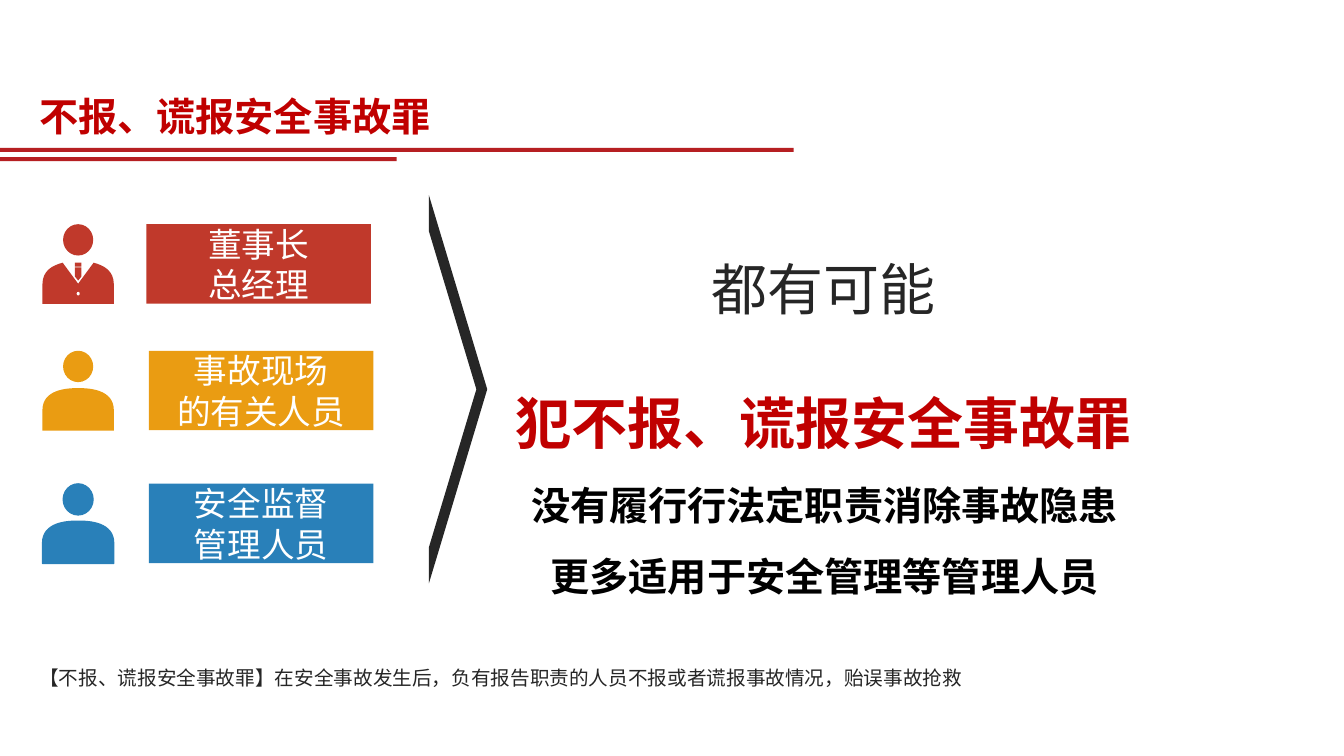
from typing import NamedTuple

from lxml import etree
from pptx import Presentation
from pptx.dml.color import RGBColor
from pptx.enum import shapes, text
from pptx.oxml import ns
from pptx.util import Cm, Pt

SANS = "Noto Sans CJK SC"
RED, DARK, WHITE = "C00000", "262626", "FFFFFF"
UNIT = Cm(0.01)  # icon outlines are drawn in hundredths of a centimetre
ICON_X = 1.97
KIND = shapes.MSO_SHAPE

Point = tuple[float, float]


class Box(NamedTuple):
    left: float
    top: float
    width: float
    height: float


class Contour(NamedTuple):
    """A start point and segments: one point is a line, three are a curve."""
    start: Point
    segments: list[tuple[Point, ...]]


class Role(NamedTuple):
    lines: list[str]
    color: str
    top: float
    card_left: float
    suit: bool = False
    outlined: bool = False


class Line(NamedTuple):
    words: str
    size: float
    color: str
    bold: bool = False
    font: str = SANS


ROLES = [
    Role(["董事长", "总经理"], "C0392B", 5.65, 3.69, suit=True),
    Role(["事故现场", "的有关人员"], "EA9C12", 8.84, 3.75),
    Role(["安全监督", "管理人员"], "2980B9", 12.19, 3.75, outlined=True),
]

PLAIN = [Contour((90, 201), [
    ((90, 150),), ((90, 97), (28, 94), (0, 94)),
    ((-28, 94), (-90, 97), (-90, 150)), ((-90, 201),)])]
BUTTON = Contour((0, 180), [
    ((-3, 180), (-4, 178), (-4, 175)), ((-4, 172), (-3, 170), (0, 170)),
    ((3, 170), (4, 172), (4, 175)), ((4, 178), (3, 180), (0, 180))])
SUIT = [Contour((39, 97), [
    ((0, 150),), ((-39, 97),), ((-65, 104), (-90, 117), (-90, 152)),
    ((-90, 201),), ((90, 201),), ((90, 152),),
    ((90, 117), (65, 104), (39, 97))]), BUTTON]
TIE = [Contour((0, 142), [((8, 132),), ((8, 109),), ((-8, 109),), ((-8, 132),)])]


def rgb(color: str) -> RGBColor:
    return RGBColor.from_string(color)


def paint(sp, color: str, outlined: bool = False):
    sp.shadow.inherit = False
    sp.fill.solid()
    sp.fill.fore_color.rgb = rgb(color)
    if outlined:
        sp.line.color.rgb = rgb(color)
        sp.line.width = Pt(0.75)
    else:
        sp.line.fill.background()
    return sp


def add_preset(s, kind, box: Box, color: str, outlined: bool = False):
    return paint(s.shapes.add_shape(kind, *map(Cm, box)), color, outlined)


def write(sp, lines: list[Line], align=text.PP_ALIGN.CENTER, spacing: float = 1,
          anchor=text.MSO_ANCHOR.TOP, wrap: bool = True) -> None:
    tf = sp.text_frame
    frame_format = {"auto_size": text.MSO_AUTO_SIZE.NONE, "word_wrap": wrap,
                    "vertical_anchor": anchor}
    for name, value in frame_format.items():
        setattr(tf, name, value)
    for i, line in enumerate(lines):
        p = tf.paragraphs[0] if i == 0 else tf.add_paragraph()
        pPr = p._p.get_or_add_pPr()
        pPr.set("marL", "0")
        pPr.set("indent", "0")
        etree.SubElement(pPr, ns.qn("a:buNone"))
        paragraph_format = {"alignment": align, "line_spacing": spacing,
                            "space_before": Pt(0), "space_after": Pt(0)}
        for name, value in paragraph_format.items():
            setattr(p, name, value)
        r = p.add_run()
        r.text = line.words
        font_format = {"name": line.font, "size": Pt(line.size), "bold": line.bold}
        for name, value in font_format.items():
            setattr(r.font, name, value)
        r.font.color.rgb = rgb(line.color)
        ea = etree.SubElement(r.font._element, ns.qn("a:ea"))
        ea.set("typeface", SANS)


def place(sp, box: Box):
    sp.left, sp.top, sp.width, sp.height = map(Cm, box)
    return sp


def add_outline(s, top: float, contours: list[Contour], color: str,
                outlined: bool = False) -> None:
    builder = s.shapes.build_freeform(*contours[0].start, scale=UNIT)
    for i, contour in enumerate(contours):
        if i:
            builder.move_to(*contour.start)
        builder.add_line_segments([pt for seg in contour.segments for pt in seg], close=True)
    sp = paint(builder.convert_to_shape(Cm(ICON_X), Cm(top)), color, outlined)
    # Join each run of three points into one Bezier curve
    steps = iter(list(sp._element.iter(ns.qn("a:lnTo"))))
    for contour in contours:
        for segment in contour.segments:
            first, *others = [next(steps) for _ in segment]
            if others:
                first.tag = ns.qn("a:cubicBezTo")
            for other in others:
                first.append(other[0])
                other.getparent().remove(other)
        # The closing step back to the start is left to the close command
        if contour.segments[-1][-1] != contour.start:
            continue


def add_role(s, role: Role) -> None:
    card = add_preset(s, KIND.RECTANGLE, Box(role.card_left, role.top, 5.66, 2), role.color)
    write(card, [Line(words, 24, WHITE) for words in role.lines],
          anchor=text.MSO_ANCHOR.MIDDLE)
    add_preset(s, KIND.OVAL, Box(ICON_X - 0.38, role.top, 0.76, 0.79), role.color, role.outlined)
    add_outline(s, role.top, SUIT if role.suit else PLAIN, role.color, role.outlined)
    if role.suit:
        add_preset(s, KIND.RECTANGLE, Box(ICON_X - 0.08, role.top + 0.97, 0.16, 0.1), role.color)
        add_outline(s, role.top, TIE, role.color)


def main() -> None:
    prs = Presentation()
    prs.slide_width, prs.slide_height = Cm(33.87), Cm(19.05)
    s = prs.slides.add_slide(prs.slide_layouts.get_by_name("Two Content"))
    title, conclusion, reasons = s.placeholders

    # Title with double rule
    for top, width in ((3.73, 20), (3.96, 10)):
        add_preset(s, KIND.RECTANGLE, Box(0, top, width, 0.1), "B61F22")
    write(place(title, Box(0.73, 2.21, 30.4, 1.45)),
          [Line("不报、谎报安全事故罪", 28, RED, True, "Arial")], text.PP_ALIGN.LEFT)

    # Roles and the arrow to the conclusion
    for role in ROLES:
        add_role(s, role)
    arrow = add_preset(s, KIND.NOTCHED_RIGHT_ARROW, Box(10.81, 4.92, 1.47, 9.78), DARK)
    arrow.adjustments[0], arrow.adjustments[1] = 0.814, 1

    # Conclusion and reasons
    write(place(conclusion, Box(12.61, 4.59, 16.28, 6.6)),
          [Line("都有可能", 40, DARK), Line("犯不报、谎报安全事故罪", 40, RED, True)], spacing=2)
    write(place(reasons, Box(13.01, 11.42, 15.54, 3.66)),
          [Line(words, 28, "000000", True) for words in
           ("没有履行行法定职责消除事故隐患", "更多适用于安全管理等管理人员")],
          spacing=1.5, wrap=False)

    # Legal definition
    note = s.shapes.add_textbox(*map(Cm, Box(0.74, 16.36, 24.05, 1.07)))
    write(note, [Line("【不报、谎报安全事故罪】在安全事故发生后，负有报告职责的人员不报或者谎报事故情况，贻误事故抢救",
                      14, DARK)], text.PP_ALIGN.LEFT, 1.5)

    prs.save("out.pptx")


if __name__ == "__main__":
    main()
